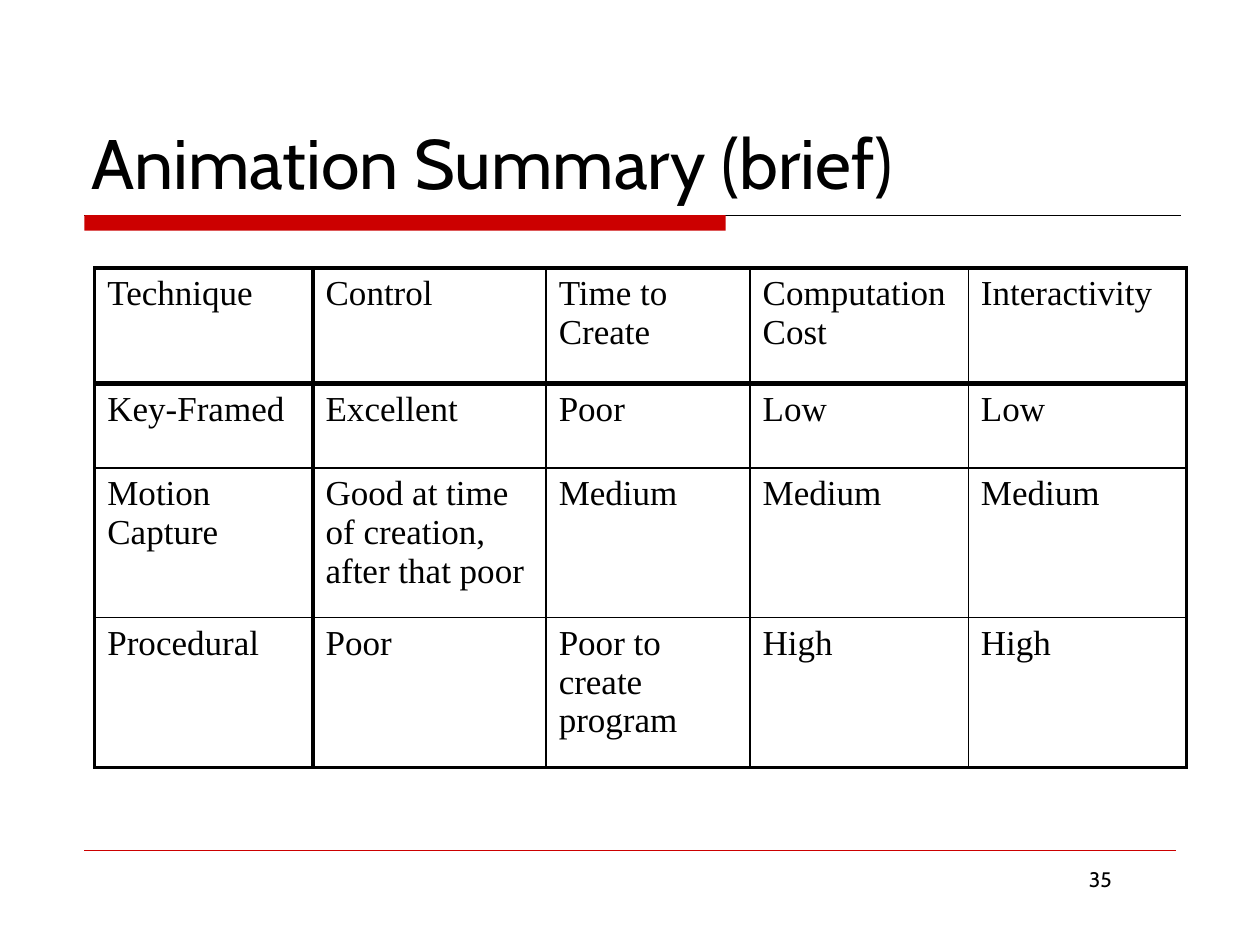
from dataclasses import dataclass

from lxml import etree
from pptx import Presentation
from pptx.dml.color import RGBColor
from pptx.enum.shapes import MSO_CONNECTOR, MSO_SHAPE
from pptx.enum.text import MSO_ANCHOR, PP_ALIGN
from pptx.oxml.ns import qn
from pptx.util import Cm, Pt

STRAIGHT = MSO_CONNECTOR.STRAIGHT
RECTANGLE = MSO_SHAPE.RECTANGLE
TOP, BOTTOM = MSO_ANCHOR.TOP, MSO_ANCHOR.BOTTOM
LEFT, RIGHT = PP_ALIGN.LEFT, PP_ALIGN.RIGHT

COLOURS = {"text": "000000", "accent": "CC0000", "rule": "000000"}

COLUMN_WIDTHS = [4.4, 4.7, 4.11, 4.4, 4.4]
ROW_HEIGHTS = [2.33, 1.7, 3.02, 3.02]
# Line weights in points, from the first outer edge to the last
VERTICAL_EDGES = [2.25, 3, 1, 1, 1, 2.25]
HORIZONTAL_EDGES = [2.25, 3, 1, 1, 2.25]
TECHNIQUES = [
    ["Technique", "Control", "Time to Create", "Computation Cost", "Interactivity"],
    ["Key-Framed", "Excellent", "Poor", "Low", "Low"],
    ["Motion Capture", "Good at time of creation, after that poor",
     "Medium", "Medium", "Medium"],
    ["Procedural", "Poor", "Poor to create program", "High", "High"],
]


@dataclass
class Label:
    text: str
    left: float
    top: float
    width: float
    height: float
    size: float
    anchor: MSO_ANCHOR
    align: PP_ALIGN


@dataclass
class Rule:
    left: float
    right: float
    top: float
    weight: float
    colour: str


LABELS = [
    Label("Animation Summary (brief)", 1.6, 0.84, 22.23, 3.38, 40, BOTTOM, LEFT),
    Label("35", 17.15, 17.35, 5.51, 1.32, 12, TOP, RIGHT),
]
RULES = [
    Rule(1.7, 23.8, 4.34, 0.75, "rule"),
    Rule(1.7, 23.7, 17.15, 0.25, "accent"),
]


def colour(name: str) -> RGBColor:
    return RGBColor.from_string(COLOURS[name])


def write_text(para, text: str, font_name: str, size: float) -> None:
    span = para.add_run()
    span.text = text
    for name, value in {"name": font_name, "size": Pt(size)}.items():
        setattr(span.font, name, value)
    span.font.color.rgb = colour("text")


def add_label(page, label: Label) -> None:
    box = page.shapes.add_textbox(
        Cm(label.left), Cm(label.top), Cm(label.width), Cm(label.height))
    frame = box.text_frame
    frame.word_wrap = True
    frame.vertical_anchor = label.anchor
    para = frame.paragraphs[0]
    para.alignment = label.align
    write_text(para, label.text, "Cabin", label.size)


def add_rule(page, rule: Rule) -> None:
    line = page.shapes.add_connector(
        STRAIGHT, Cm(rule.left), Cm(rule.top), Cm(rule.right), Cm(rule.top))
    line.line.width = Pt(rule.weight)
    line.line.color.rgb = colour(rule.colour)
    etree.SubElement(line._element.spPr, qn("a:effectLst"))


def add_title_bar(page) -> None:
    bar = page.shapes.add_shape(RECTANGLE, Cm(1.7), Cm(4.34), Cm(12.93), Cm(0.31))
    bar.shadow.inherit = False
    bar.fill.solid()
    bar.fill.fore_color.rgb = colour("accent")
    bar.line.fill.background()


def set_borders(cell, weights: dict[str, float]) -> None:
    """Draw the cell's edges; the keys must come in the schema's order."""
    properties = cell._tc.get_or_add_tcPr()
    for tag, weight in weights.items():
        edge = etree.SubElement(properties, qn(f"a:{tag}"), w=str(Pt(weight)))
        fill = etree.SubElement(edge, qn("a:solidFill"))
        etree.SubElement(fill, qn("a:srgbClr"), val=COLOURS["text"])


def add_techniques_table(page) -> None:
    table = page.shapes.add_table(
        len(ROW_HEIGHTS), len(COLUMN_WIDTHS), Cm(1.91), Cm(5.4),
        Cm(sum(COLUMN_WIDTHS)), Cm(sum(ROW_HEIGHTS))).table
    table.first_row = table.horz_banding = False
    for column, width in zip(table.columns, COLUMN_WIDTHS):
        column.width = Cm(width)
    for row, height in zip(table.rows, ROW_HEIGHTS):
        row.height = Cm(height)
    for r, texts in enumerate(TECHNIQUES):
        for c, text in enumerate(texts):
            cell = table.cell(r, c)
            write_text(cell.text_frame.paragraphs[0], text, "Times New Roman", 20)
            set_borders(cell, {
                "lnL": VERTICAL_EDGES[c], "lnR": VERTICAL_EDGES[c + 1],
                "lnT": HORIZONTAL_EDGES[r], "lnB": HORIZONTAL_EDGES[r + 1]})
            cell.fill.background()


def main() -> None:
    deck = Presentation()
    deck.slide_width, deck.slide_height = Cm(25.4), Cm(19.05)
    page = deck.slides.add_slide(deck.slide_layouts[6])
    for rule in RULES:
        add_rule(page, rule)
    add_title_bar(page)
    for label in LABELS:
        add_label(page, label)
    add_techniques_table(page)
    deck.save("out.pptx")


if __name__ == "__main__":
    main()
